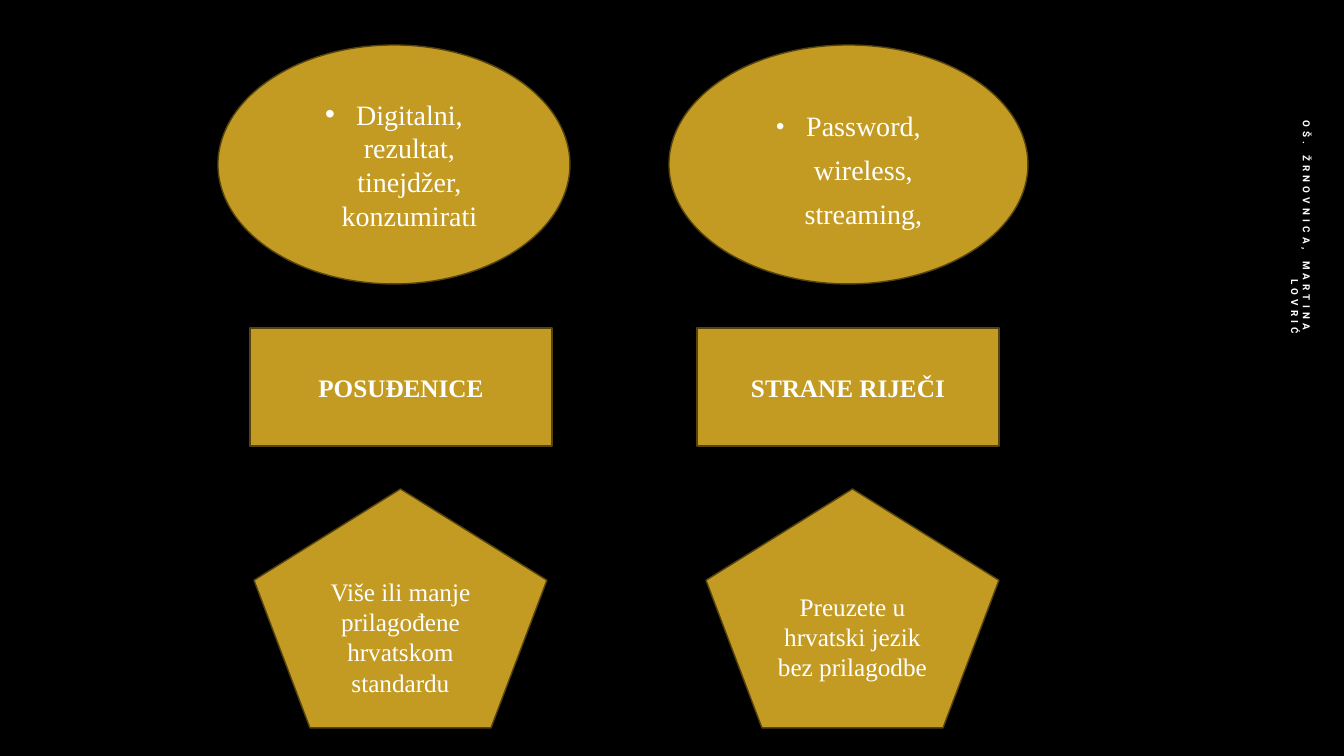
from dataclasses import dataclass

from lxml.etree import SubElement
from pptx import Presentation
from pptx.dml.color import RGBColor
from pptx.enum.shapes import MSO_SHAPE
from pptx.enum.text import MSO_ANCHOR, PP_ALIGN
from pptx.oxml.ns import qn
from pptx.util import Pt

PX = 914400 / 100.8


@dataclass(frozen=True)
class Theme:
    background: RGBColor = RGBColor(0x00, 0x00, 0x00)
    gold: RGBColor = RGBColor(0xC3, 0x9B, 0x23)
    outline: RGBColor = RGBColor(0x55, 0x44, 0x0F)
    text: RGBColor = RGBColor(0xFF, 0xFF, 0xFF)
    serif: str = "Times New Roman"
    sans: str = "Roboto"
    example_size: int = 20
    body_size: int = 18
    author_size: int = 7


theme = Theme()


def px(*lengths):
    return [round(length * PX) for length in lengths]


def write(shape, text, size=theme.body_size, font=theme.serif, bold=False,
          align=PP_ALIGN.CENTER, spacing=None, before=None, tracking=None,
          bullet_indent=None, bullet_percent=100):
    frame = shape.text_frame
    frame.word_wrap = True
    frame.vertical_anchor = MSO_ANCHOR.MIDDLE
    paragraph = frame.paragraphs[0]
    paragraph.alignment = align
    paragraph.line_spacing = spacing
    paragraph.space_before = before
    run = paragraph.add_run()
    run.text = text
    run.font.name = font
    run.font.size = Pt(size)
    run.font.bold = bold
    run.font.color.rgb = theme.text
    if tracking:
        run.font._element.set("spc", str(tracking * 100))
    if bullet_indent:
        indent = px(bullet_indent)[0]
        properties = paragraph._p.get_or_add_pPr()
        properties.set("marL", str(indent))
        properties.set("indent", str(-indent))
        SubElement(properties, qn("a:buSzPct"), val=str(bullet_percent * 1000))
        SubElement(properties, qn("a:buFont"), typeface="Arial")
        SubElement(properties, qn("a:buChar"), char="•")


presentation = Presentation()
presentation.slide_width, presentation.slide_height = px(1344, 756)
slide = presentation.slides.add_slide(presentation.slide_layouts[6])
slide.background.fill.solid()
slide.background.fill.fore_color.rgb = theme.background

loanword_examples = dict(size=theme.example_size, bullet_indent=31)
foreign_examples = dict(size=theme.example_size, bullet_indent=30,
                        bullet_percent=85, spacing=1.3, before=Pt(10))
heading = dict(bold=True)

word_groups = [
    (MSO_SHAPE.OVAL, (218, 45, 352, 239),
     "Digitalni, rezultat, tinejdžer, konzumirati", loanword_examples),
    (MSO_SHAPE.OVAL, (669, 45, 359, 239),
     "Password, wireless, streaming,", foreign_examples),
    (MSO_SHAPE.RECTANGLE, (250, 328, 302, 118), "POSUĐENICE", heading),
    (MSO_SHAPE.RECTANGLE, (697, 328, 302, 118), "STRANE RIJEČI", heading),
    (MSO_SHAPE.REGULAR_PENTAGON, (254, 489, 293, 239),
     "Više ili manje prilagođene hrvatskom standardu", {}),
    (MSO_SHAPE.REGULAR_PENTAGON, (706, 489, 293, 239),
     "Preuzete u hrvatski jezik bez prilagodbe", {}),
]

for outline, bounds, wording, text_format in word_groups:
    word_group = slide.shapes.add_shape(outline, *px(*bounds))
    word_group.shadow.inherit = False
    word_group.fill.solid()
    word_group.fill.fore_color.rgb = theme.gold
    word_group.line.color.rgb = theme.outline
    word_group.line.width = Pt(1)
    write(word_group, wording, **text_format)

author = slide.shapes.add_textbox(*px(1154, 177, 294, 40))
author.rotation = 90
author.text_frame.margin_left = px(30)[0]
write(author, "OŠ. ŽRNOVNICA, MARTINA LOVRIĆ", size=theme.author_size,
      font=theme.sans, bold=True, align=PP_ALIGN.RIGHT, tracking=3)

presentation.save("out.pptx")
